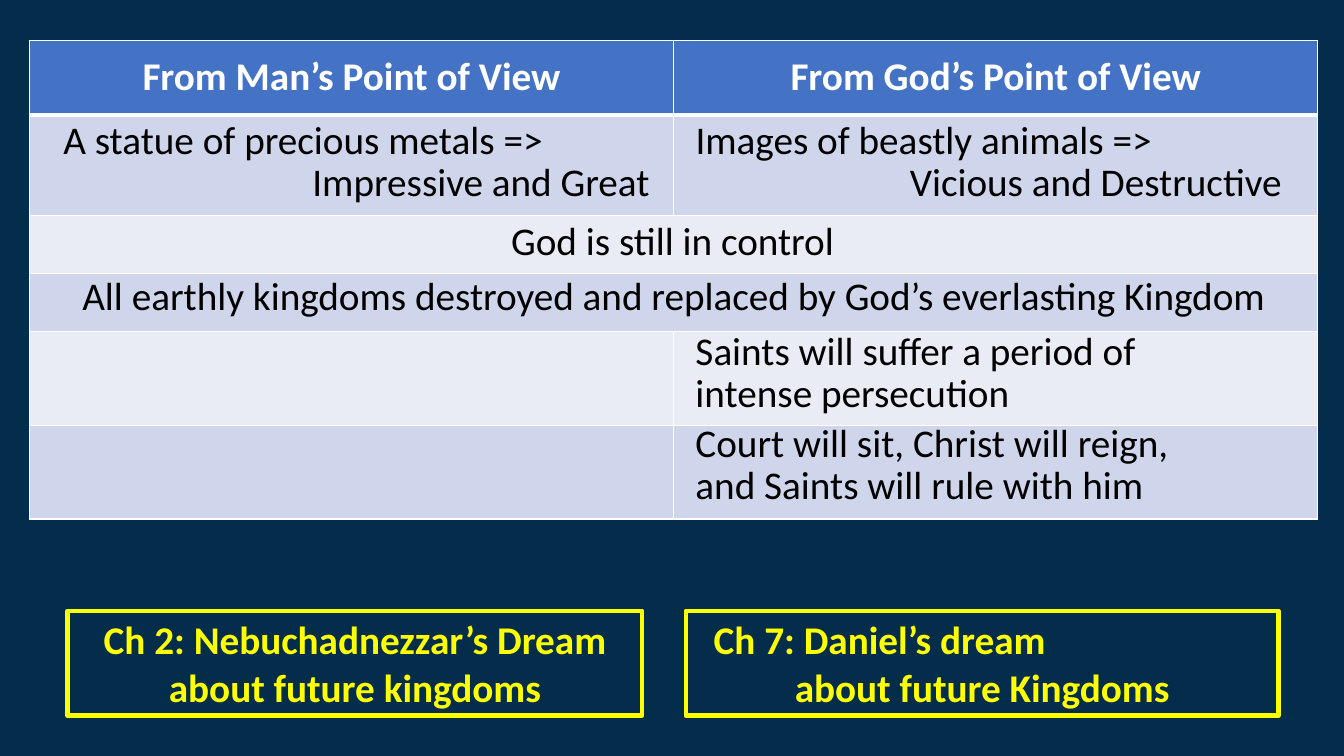
"""Build a slide comparing two visions of future kingdoms."""
import itertools

import pptx
import pptx.dml.color
import pptx.enum.shapes
import pptx.enum.text
import pptx.oxml
import pptx.util
from pptx.oxml.ns import nsdecls

WIDTH, HEIGHT = 13.33, 7.5
COLORS = {"navy": "042D4C", "header": "4472C4", "dark_band": "CFD5EA",
          "light_band": "E9EBF5", "white": "FFFFFF", "black": "000000",
          "yellow": "FFFF00"}
FONT, SIZE = "Calibri", 28
HEADERS = ["From Man’s Point of View", "From God’s Point of View"]
TABLE_LEFT, TABLE_TOP, COL_WIDTH = 0.29, 0.4, 6.39
ROW_HEIGHTS = [0.74, 1, 0.57, 0.58, 0.93, 0.93]
MERGED_ROWS = [2, 3]
RIGHT_COL = 6.8

# fmt: off
STATEMENTS = [
    (1, 0, 0.53, 6.01, 0.95, "middle", [("A statue of precious metals =>", "left"), ("Impressive and Great", "right")]),
    (1, 0, RIGHT_COL, 6.01, 0.95, "middle", [("Images of beastly animals =>", "left"), ("Vicious and Destructive", "right")]),
    (2, 0, 4.39, 4.56, 0.53, "middle", [("God is still in control", "center")]),
    (3, -0.02, 0.64, 12.08, 0.53, "middle",
     [("All earthly kingdoms destroyed and replaced by God’s everlasting Kingdom", "center")]),
    (4, -0.05, RIGHT_COL, 5.46, 0.95, "top", [("Saints will suffer a period of intense persecution", "left")]),
    (5, -0.07, RIGHT_COL, 5.46, 0.95, "top", [("Court will sit, Christ will reign, and Saints will rule with him", "left")]),
]
# fmt: on
CHAPTER_TOP, CHAPTER_HEIGHT, CHAPTER_INDENT = 6.06, 1.04, 0.18
CHAPTERS = [
    (0.67, 5.7, [("Ch 2: Nebuchadnezzar’s Dream about future kingdoms", "center")]),
    (RIGHT_COL, 5.88, [("Ch 7: Daniel’s dream", "left"), ("about future Kingdoms", "center")]),
]
ALIGN = {"left": pptx.enum.text.PP_ALIGN.LEFT,
         "center": pptx.enum.text.PP_ALIGN.CENTER,
         "right": pptx.enum.text.PP_ALIGN.RIGHT}
ANCHOR = {"top": pptx.enum.text.MSO_ANCHOR.TOP,
          "middle": pptx.enum.text.MSO_ANCHOR.MIDDLE}


def rgb(name):
    return pptx.dml.color.RGBColor.from_string(COLORS[name])


def inches(*lengths):
    return [pptx.util.Inches(length) for length in lengths]


def write(tf, lines, color, bold=False, spacing=None, indent=0):
    tf.word_wrap = True
    tf.text = "\n".join(text for text, _ in lines)
    for p, (_, align) in zip(tf.paragraphs, lines):
        p.alignment = ALIGN[align]
        if spacing:
            p.line_spacing = spacing
        if indent and align == "left":
            p._p.get_or_add_pPr().set("marL", str(pptx.util.Inches(indent)))
        for r in p.runs:
            r.font.name, r.font.size, r.font.bold = FONT, pptx.util.Pt(SIZE), bold
            r.font.color.rgb = rgb(color)


def add_borders(cell, widths):
    tc_pr = cell._tc.get_or_add_tcPr()
    for i, (side, points) in enumerate(zip("LRTB", widths)):
        tc_pr.insert(i, pptx.oxml.parse_xml(
            f'<a:ln{side} {nsdecls("a")} w="{pptx.util.Pt(points)}"><a:solidFill>'
            f'<a:srgbClr val="{COLORS["white"]}"/></a:solidFill></a:ln{side}>'))


def add_table(s):
    rows, cols = len(ROW_HEIGHTS), len(HEADERS)
    table = s.shapes.add_table(rows, cols, *inches(
        TABLE_LEFT, TABLE_TOP, COL_WIDTH * cols, sum(ROW_HEIGHTS))).table
    for row, height in zip(table.rows, ROW_HEIGHTS):
        row.height = pptx.util.Inches(height)
    for col in table.columns:
        col.width = pptx.util.Inches(COL_WIDTH)
    for i, j in itertools.product(range(rows), range(cols)):
        cell = table.cell(i, j)
        band = "header" if i == 0 else "dark_band" if i % 2 else "light_band"
        cell.fill.solid()
        cell.fill.fore_color.rgb = rgb(band)
        add_borders(cell, (1, 1, 3 if i == 1 else 1, 3 if i == 0 else 1))
    for j, header in enumerate(HEADERS):
        cell = table.cell(0, j)
        cell.vertical_anchor = ANCHOR["middle"]
        write(cell.text_frame, [(header, "center")], "white", bold=True)
    for i in MERGED_ROWS:
        table.cell(i, 0).merge(table.cell(i, cols - 1))


def add_statement(s, row, shift, left, width, height, anchor, lines):
    top = TABLE_TOP + sum(ROW_HEIGHTS[:row]) + shift
    tf = s.shapes.add_textbox(*inches(left, top, width, height)).text_frame
    tf.vertical_anchor = ANCHOR[anchor]
    write(tf, lines, "black", spacing=0.9)


def add_chapter(s, left, width, lines):
    sp = s.shapes.add_shape(pptx.enum.shapes.MSO_SHAPE.RECTANGLE,
                            *inches(left, CHAPTER_TOP, width, CHAPTER_HEIGHT))
    sp.shadow.inherit = False
    sp.fill.solid()
    sp.fill.fore_color.rgb = rgb("navy")
    sp.line.color.rgb = rgb("yellow")
    sp.line.width = pptx.util.Pt(3)
    sp.text_frame.vertical_anchor = ANCHOR["top"]
    write(sp.text_frame, lines, "yellow", bold=True, indent=CHAPTER_INDENT)


def main():
    prs = pptx.Presentation()
    prs.slide_width, prs.slide_height = inches(WIDTH, HEIGHT)
    s = prs.slides.add_slide(prs.slide_layouts[6])
    s.background.fill.solid()
    s.background.fill.fore_color.rgb = rgb("navy")
    add_table(s)
    for statement in STATEMENTS:
        add_statement(s, *statement)
    for chapter in CHAPTERS:
        add_chapter(s, *chapter)
    prs.save("out.pptx")


if __name__ == "__main__":
    main()
